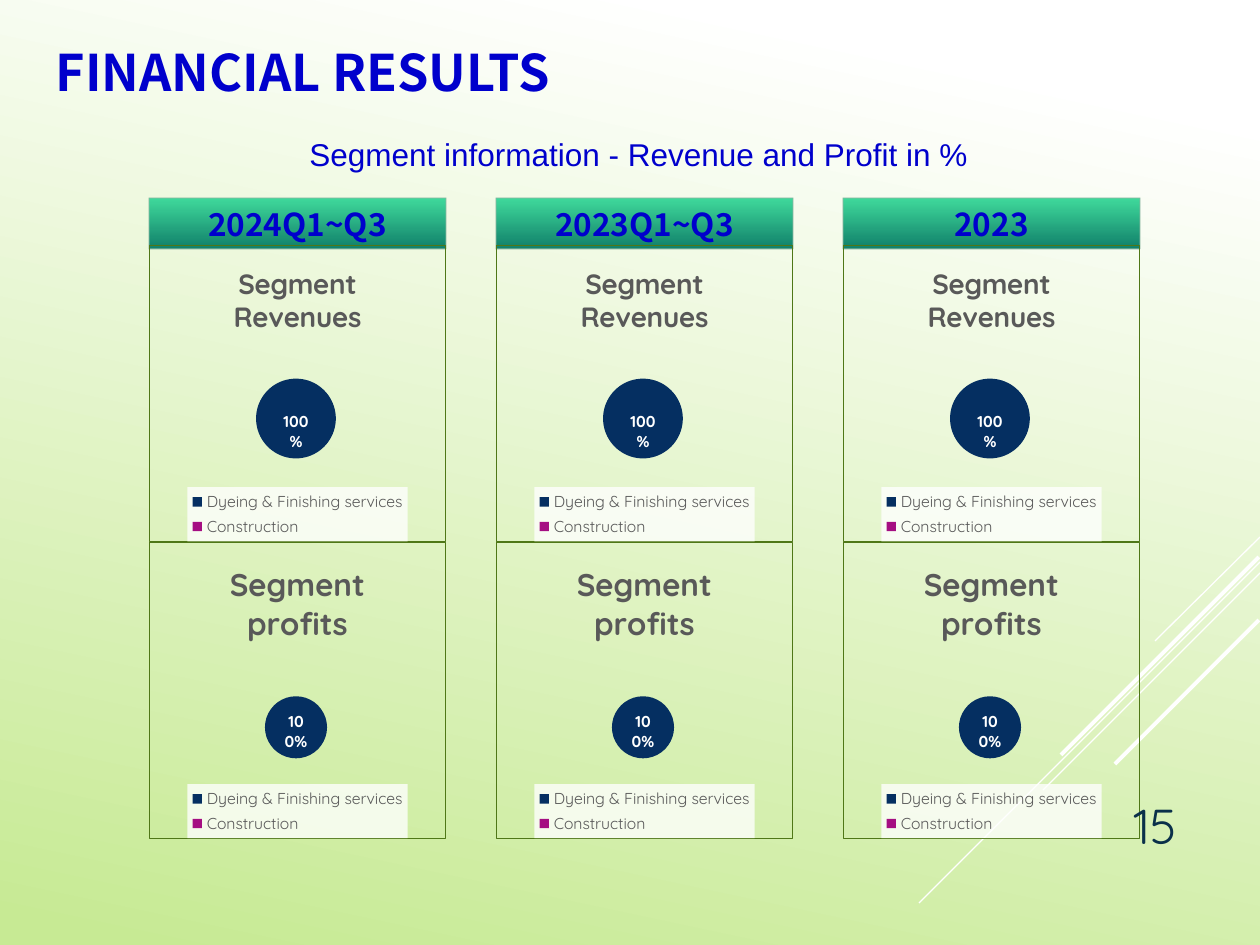
from dataclasses import dataclass

from pptx import Presentation
from pptx import util as u
from pptx.chart.data import CategoryChartData
from pptx.dml.color import RGBColor
from pptx.enum import chart as ch, shapes, text
from pptx.oxml import ns, parse_xml

SCALE = 914400 / 126
COLORS = {
    "white": "FFFFFF", "lime": "C7EA94", "blue": "0000CC",
    "mint": "3FD99B", "teal": "11806A", "sage": "8AB7A1",
    "border": "4F7717", "grey": "595959", "number": "0A304A",
    "dyeing": "052F61", "construction": "A50E82",
}
HEADING, BODY, CHART = "Noto Sans CJK SC", "Arial", "Quicksand"
SEGMENTS = ("Dyeing & Finishing services", "Construction")
LEFT, STEP, SIZE = 149, 347, 297
HEADER_TOP, HEADER_HEIGHT, CHART_TOP = 198, 51, 245


@dataclass
class Period:
    label: str
    zero_label: bool


@dataclass
class Panel:
    title: str
    title_size: int
    pie_x: float
    pie_y: float
    pie_size: float


@dataclass
class Ray:
    x1: int
    y1: int
    x2: int
    y2: int
    width: float


PERIODS = [Period("2024Q1~Q3", False), Period("2023Q1~Q3", True), Period("2023", True)]
REVENUES = Panel("Segment Revenues", 16, 0.36, 0.45, 0.27)
PROFITS = Panel("Segment profits", 18, 0.39, 0.52, 0.21)
RAYS = [
    Ray(1260, 537, 1155, 641, 0.75),
    Ray(1260, 562, 919, 903, 0.75),
    Ray(1260, 573, 1043, 790, 0.75),
    Ray(1259, 557, 1061, 755, 2.25),
    Ray(1259, 620, 1115, 764, 2.25),
]


def px(n: int) -> u.Emu:
    return u.Emu(round(n * SCALE))


def rgb(name: str) -> RGBColor:
    return RGBColor.from_string(COLORS[name])


def xml(body: str):
    tag, rest = body.split(">", 1)
    return parse_xml(f"{tag} {ns.nsdecls('c', 'a')}>{rest}")


def style(font, size: float, name: str, color: str, bold: bool = False) -> None:
    font.size, font.name, font.bold = u.Pt(size), name, bold
    font.color.rgb = rgb(color)


def write(tf, words: str, size: float, name: str, color: str,
          bold: bool = False, align=text.PP_ALIGN.LEFT) -> None:
    tf.text = words
    p = tf.paragraphs[0]
    p.alignment = align
    style(p.runs[0].font, size, name, color, bold)


def gradient(fill, start: str, end: str, angle: int,
             first: float = 0, last: float = 1) -> None:
    fill.gradient()
    fill.gradient_angle = angle
    for stop, color, position in zip(fill.gradient_stops, (start, end), (first, last)):
        stop.color.rgb = rgb(color)
        stop.position = position


def add_ray(s, ray: Ray) -> None:
    line = s.shapes.add_connector(shapes.MSO_CONNECTOR.STRAIGHT,
                                  px(ray.x1), px(ray.y1), px(ray.x2), px(ray.y2))
    line.line.color.rgb = rgb("white")
    line.line.width = u.Pt(ray.width)
    line._element.spPr.append(xml("<a:effectLst></a:effectLst>"))


def add_header(s, left: int, label: str) -> None:
    sp = s.shapes.add_shape(shapes.MSO_SHAPE.RECTANGLE, px(left), px(HEADER_TOP),
                            px(SIZE), px(HEADER_HEIGHT))
    sp.shadow.inherit = False
    gradient(sp.fill, "mint", "teal", 270)
    sp.line.color.rgb = rgb("sage")
    sp.line.width = u.Pt(0.75)
    edge = sp.line._ln.find(".//" + ns.qn("a:srgbClr"))
    edge.append(xml('<a:alpha val="60000"></a:alpha>'))
    sp.text_frame.vertical_anchor = text.MSO_ANCHOR.MIDDLE
    write(sp.text_frame, label, 18, HEADING, "blue", True, text.PP_ALIGN.CENTER)


def add_text(s, left: int, top: int, width: int, height: int):
    tf = s.shapes.add_textbox(px(left), px(top), px(width), px(height)).text_frame
    tf.word_wrap = True
    return tf


def add_pie(s, left: int, top: int, panel: Panel, zero_label: bool) -> None:
    data = CategoryChartData()
    data.categories = SEGMENTS
    data.add_series(panel.title, (100, 0))
    chart = s.shapes.add_chart(ch.XL_CHART_TYPE.PIE, px(left), px(top),
                               px(SIZE), px(SIZE), data).chart
    style(chart.font, 10, CHART, "white")
    chart._chartSpace.find(ns.qn("c:txPr")).addprevious(xml(
        '<c:spPr><a:noFill/><a:ln w="9525"><a:solidFill>'
        f'<a:srgbClr val="{COLORS["border"]}"/></a:solidFill></a:ln></c:spPr>'))

    chart.has_title = True
    write(chart.chart_title.text_frame, panel.title, panel.title_size,
          CHART, "grey", True, text.PP_ALIGN.CENTER)
    chart.chart_title.include_in_layout = False

    chart.has_legend = True
    legend = chart.legend
    legend.position = ch.XL_LEGEND_POSITION.BOTTOM
    legend.include_in_layout = False
    style(legend.font, 9, CHART, "grey")
    legend._element.find(ns.qn("c:txPr")).addprevious(xml(
        f'<c:spPr><a:solidFill><a:srgbClr val="{COLORS["white"]}">'
        '<a:alpha val="78000"/></a:srgbClr></a:solidFill></c:spPr>'))

    plot = chart.plots[0]
    plot.vary_by_categories = True
    series = plot.series[0]
    for i, color in enumerate(("dyeing", "construction")):
        fill = series.points[i].format.fill
        fill.solid()
        fill.fore_color.rgb = rgb(color)
    labels = series.data_labels
    labels.show_value = False
    labels.show_percentage = True
    labels.number_format = "0%"
    labels.number_format_is_linked = False
    labels.position = ch.XL_LABEL_POSITION.INSIDE_END
    style(labels.font, 9, CHART, "white", True)
    if not zero_label:
        labels._element.insert(0, xml(
            '<c:dLbl><c:idx val="1"/><c:delete val="1"/></c:dLbl>'))

    area = chart._chartSpace.chart.plotArea
    for old in area.findall(ns.qn("c:layout")):
        area.remove(old)
    area.insert(0, xml(
        '<c:layout><c:manualLayout><c:layoutTarget val="inner"/>'
        '<c:xMode val="edge"/><c:yMode val="edge"/>'
        f'<c:x val="{panel.pie_x}"/><c:y val="{panel.pie_y}"/>'
        f'<c:w val="{panel.pie_size}"/><c:h val="{panel.pie_size}"/>'
        '</c:manualLayout></c:layout>'))


def main() -> None:
    prs = Presentation()
    prs.slide_width, prs.slide_height = px(1260), px(945)
    s = prs.slides.add_slide(prs.slide_layouts[5])
    gradient(s.background.fill, "white", "lime", 258, 0.1, 0.98)
    for ray in RAYS:
        add_ray(s, ray)

    title = s.shapes.title
    title.left, title.top, title.width, title.height = px(43), px(35), px(1177), px(72)
    title.text_frame.vertical_anchor = text.MSO_ANCHOR.MIDDLE
    write(title.text_frame, "FINANCIAL RESULTS", 28.8, HEADING, "blue", True)
    write(add_text(s, 297, 129, 725, 51),
          "Segment information - Revenue and Profit in %", 18, BODY, "blue")

    for i, period in enumerate(PERIODS):
        left = LEFT + i * STEP
        add_header(s, left, period.label)
        add_pie(s, left, CHART_TOP, REVENUES, period.zero_label)
        add_pie(s, left, CHART_TOP + SIZE, PROFITS, False)

    tf = add_text(s, 1071, 769, 118, 92)
    tf.vertical_anchor = text.MSO_ANCHOR.BOTTOM
    write(tf, "15", 28, CHART, "number", align=text.PP_ALIGN.RIGHT)
    prs.save("out.pptx")


if __name__ == "__main__":
    main()
